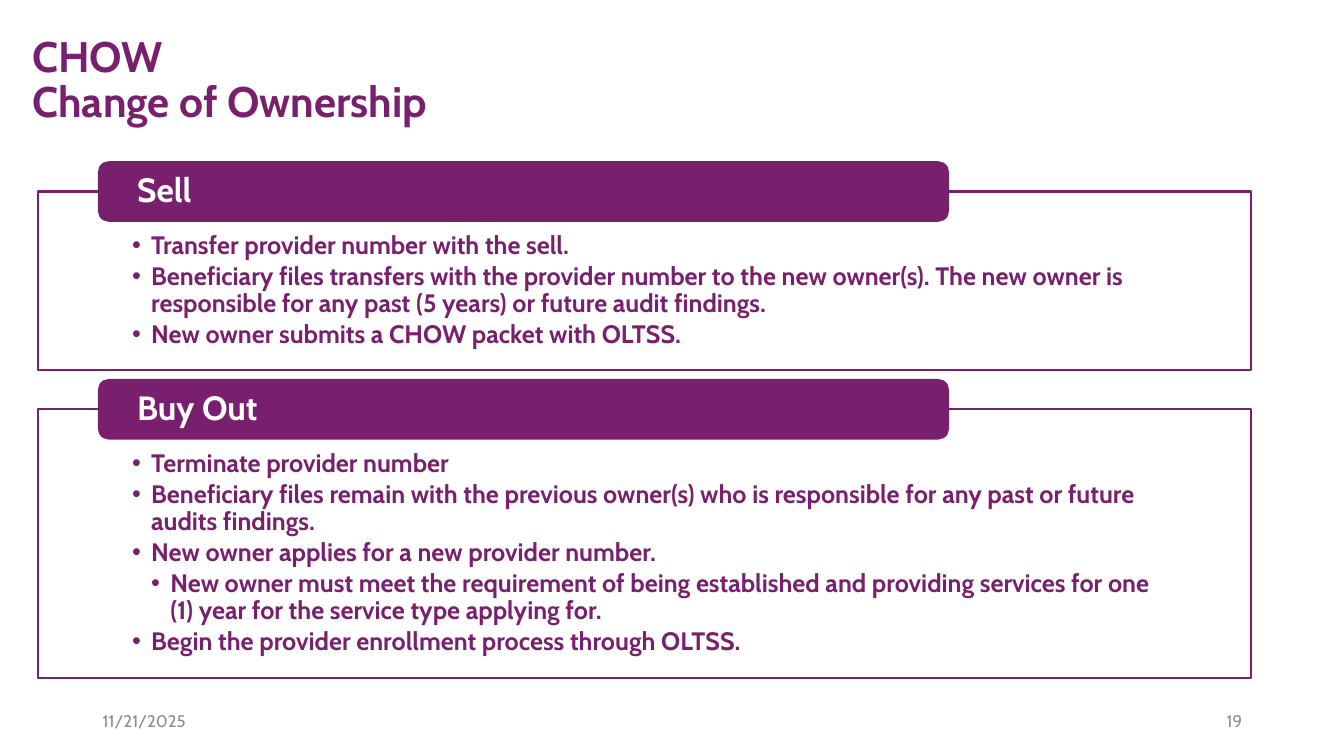
import pptx
import pptx.util
import pptx.dml.color
import pptx.enum.shapes
import pptx.enum.text
import lxml.etree
from pptx.oxml.ns import qn

Inches = pptx.util.Inches
Pt = pptx.util.Pt
Anchor = pptx.enum.text.MSO_ANCHOR
Align = pptx.enum.text.PP_ALIGN
Kind = pptx.enum.shapes.MSO_SHAPE

HUES = {"plum": "78206E", "white": "FFFFFF", "gray": "8C8C8C"}
FONT = "Cabin"
STEP = 0.19

CARDS = [
    ("Sell", 1.61, 2.06, [
        (0, "Transfer provider number with the sell."),
        (0, "Beneficiary files transfers with the provider number to the new "
            "owner(s). The new owner is responsible for any past (5 years) or "
            "future audit findings."),
        (0, "New owner submits a CHOW packet with OLTSS."),
    ]),
    ("Buy Out", 3.77, 2.96, [
        (0, "Terminate provider number"),
        (0, "Beneficiary files remain with the previous owner(s) who is "
            "responsible for any past or future audits findings."),
        (0, "New owner applies for a new provider number."),
        (1, "New owner must meet the requirement of being established and "
            "providing services for one (1) year for the service type "
            "applying for."),
        (0, "Begin the provider enrollment process through OLTSS."),
    ]),
]


def hue(name):
    return pptx.dml.color.RGBColor.from_string(HUES[name])


def bullet(para, level):
    para.level = level
    props = para._p.get_or_add_pPr()
    props.set("marL", str(Inches(STEP * (level + 1))))
    props.set("indent", str(-Inches(STEP)))
    lxml.etree.SubElement(props, qn("a:buFont")).set("typeface", "Arial")
    lxml.etree.SubElement(props, qn("a:buChar")).set("char", "•")


def write(shape, lines, size, color="plum", bold=True, align=Align.LEFT,
          anchor=Anchor.MIDDLE, inset=(0.1, 0.05, 0.1, 0.05), lead=0.9,
          after=0, dots=False):
    frame = shape.text_frame
    frame.word_wrap = True
    frame.auto_size = pptx.enum.text.MSO_AUTO_SIZE.NONE
    frame.vertical_anchor = anchor
    (frame.margin_left, frame.margin_top,
     frame.margin_right, frame.margin_bottom) = map(Inches, inset)
    for i, (level, text) in enumerate(lines):
        para = frame.paragraphs[0] if i == 0 else frame.add_paragraph()
        if dots:
            bullet(para, level)
        para.alignment = align
        para.line_spacing = lead
        para.space_before = Pt(0)
        para.space_after = Pt(after)
        run = para.add_run()
        run.text = text
        font = run.font
        font.name, font.size, font.bold = FONT, Pt(size), bold
        font.color.rgb = hue(color)


def block(slide, kind, box, fill):
    shape = slide.shapes.add_shape(kind, *map(Inches, box))
    shape.shadow.inherit = False
    shape.fill.solid()
    shape.fill.fore_color.rgb = hue(fill)
    shape.line.color.rgb = hue("plum")
    shape.line.width = Pt(1.5)
    return shape


def head(slide, box):
    title = slide.shapes.title
    title.left, title.top, title.width, title.height = map(Inches, box)
    write(title, [(0, "CHOW"), (0, "Change of Ownership")], 30.5,
          lead=0.7, after=6)


def card(slide, box, name, items):
    left, top, width, height = box
    tab = 0.58
    panel = block(slide, Kind.RECTANGLE,
                  (left, top + tab / 2, width, height - tab / 2), "white")
    write(panel, items, 18, anchor=Anchor.TOP,
          inset=(0.93, 0.41, 0.93, 0.14), after=2.7, dots=True)
    bar = block(slide, Kind.ROUNDED_RECTANGLE,
                (left + width * 0.05, top, width * 0.7, tab), "plum")
    write(bar, [(0, name)], 24, color="white", inset=(0.35, 0, 0.35, 0))


def foot(slide, box):
    left, top, width, height = box
    part = 3
    for x, text, align in ((left, "11/21/2025", Align.LEFT),
                           (left + width - part, "19", Align.RIGHT)):
        note = slide.shapes.add_textbox(*map(Inches, (x, top, part, height)))
        write(note, [(0, text)], 12, color="gray", bold=False, align=align,
              lead=1.0)


def main():
    deck = pptx.Presentation()
    deck.slide_width, deck.slide_height = Inches(13.33), Inches(7.5)
    slide = deck.slides.add_slide(deck.slide_layouts[5])
    head(slide, (0.22, 0.34, 5.04, 0.99))
    for name, top, height, items in CARDS:
        card(slide, (0.38, top, 12.03, height), name, items)
    foot(slide, (0.92, 6.95, 11.5, 0.4))
    deck.save("out.pptx")


if __name__ == "__main__":
    main()
